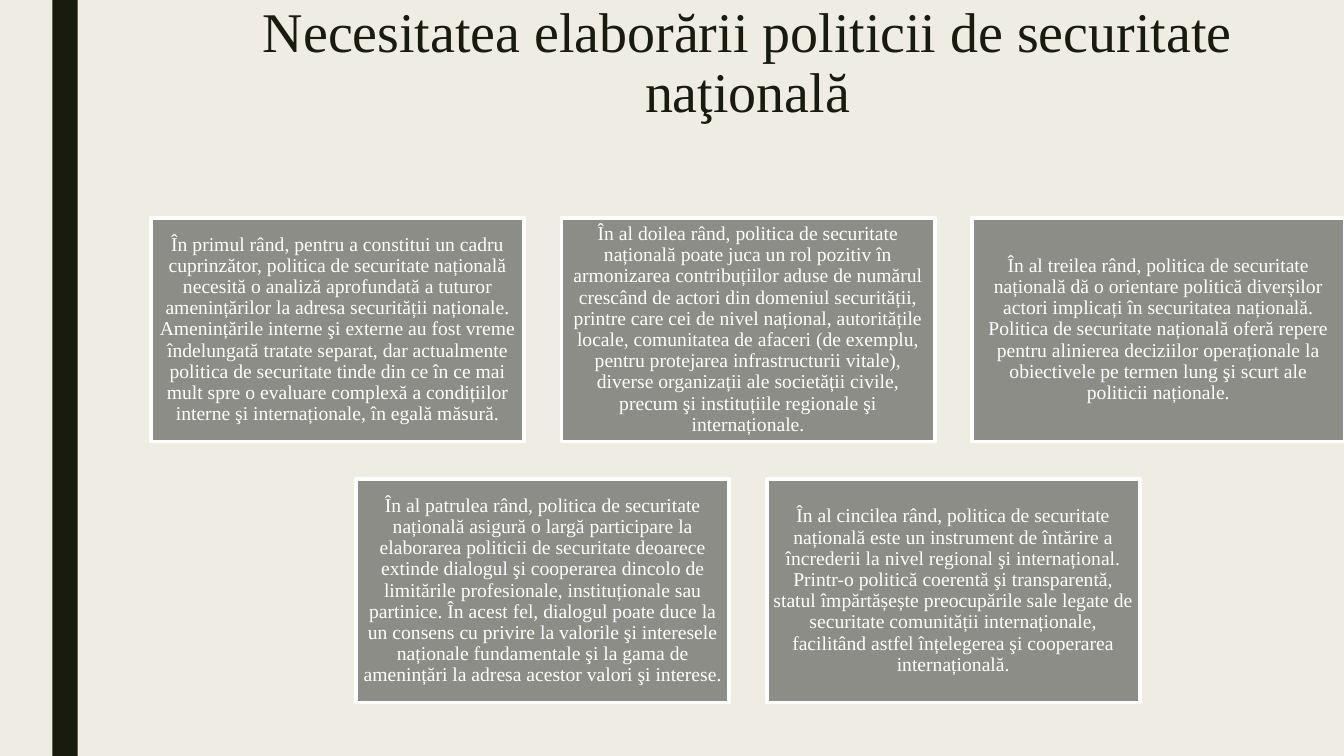
"""Build a slide on why a national security policy is needed."""
import pptx
import pptx.util
import pptx.dml.color
import pptx.enum.shapes
import pptx.enum.text

TITLE = "Necesitatea elaborării politicii de securitate naţională"
ROWS = [
    [
        "În primul rând, pentru a constitui un cadru cuprinzător, politica de securitate națională necesită o analiză aprofundată a tuturor amenințărilor la adresa securității naționale. Amenințările interne şi externe au fost vreme îndelungată tratate separat, dar actualmente politica de securitate tinde din ce în ce mai mult spre o evaluare complexă a condițiilor interne şi internaționale, în egală măsură.",
        "În al doilea rând, politica de securitate națională poate juca un rol pozitiv în armonizarea contribuțiilor aduse de numărul crescând de actori din domeniul securității, printre care cei de nivel național, autoritățile locale, comunitatea de afaceri (de exemplu, pentru protejarea infrastructurii vitale), diverse organizații ale societății civile, precum şi instituțiile regionale şi internaționale.",
        "În al treilea rând, politica de securitate națională dă o orientare politică diverșilor actori implicați în securitatea națională. Politica de securitate națională oferă repere pentru alinierea deciziilor operaționale la obiectivele pe termen lung şi scurt ale politicii naționale.",
    ],
    [
        "În al patrulea rând, politica de securitate națională asigură o largă participare la elaborarea politicii de securitate deoarece extinde dialogul şi cooperarea dincolo de limitările profesionale, instituționale sau partinice. În acest fel, dialogul poate duce la un consens cu privire la valorile şi interesele naționale fundamentale şi la gama de amenințări la adresa acestor valori şi interese.",
        "În al cincilea rând, politica de securitate națională este un instrument de întărire a încrederii la nivel regional şi internațional. Printr-o politică coerentă şi transparentă, statul împărtășește preocupările sale legate de securitate comunității internaționale, facilitând astfel înțelegerea şi cooperarea internațională.",
    ],
]
THEME = {
    "font": "Times New Roman",
    "back": "EFEDE3", "dark": "191B0E", "card": "8C8D86", "light": "FFFFFF",
    "title": 40, "body": 14, "edge": 2.75,
}
LEFT, TOP, WIDE, HIGH, GAP = 1.5, 2.16, 3.7, 2.22, 0.37
Inches, Pt = pptx.util.Inches, pptx.util.Pt
MIDDLE = pptx.enum.text.MSO_ANCHOR.MIDDLE
UPPER = pptx.enum.text.MSO_ANCHOR.TOP


def tint(name):
    return pptx.dml.color.RGBColor.from_string(THEME[name])


def assign(item, values):
    for name, value in values.items():
        setattr(item, name, value)


def paint(fill, name):
    fill.solid()
    fill.fore_color.rgb = tint(name)


def block(slide, area, color):
    kind = pptx.enum.shapes.MSO_SHAPE.RECTANGLE
    shape = slide.shapes.add_shape(kind, *map(Inches, area))
    shape.shadow.inherit = False
    paint(shape.fill, color)
    shape.line.fill.background()
    return shape


def write(shape, text, size, color, pad, anchor, space):
    frame = shape.text_frame
    side, edge = map(Inches, pad)
    assign(frame, {
        "word_wrap": True, "vertical_anchor": anchor,
        "margin_left": side, "margin_right": side,
        "margin_top": edge, "margin_bottom": edge,
    })
    para = frame.paragraphs[0]
    para.text = text
    assign(para, {"alignment": pptx.enum.text.PP_ALIGN.CENTER, "line_spacing": space})
    assign(para.font, {"name": THEME["font"], "size": Pt(THEME[size])})
    para.font.color.rgb = tint(color)


def main():
    deck = pptx.Presentation()
    assign(deck, {"slide_width": Inches(13.33), "slide_height": Inches(7.5)})
    slide = deck.slides.add_slide(deck.slide_layouts[6])
    paint(slide.background.fill, "back")
    block(slide, (0.52, 0, 0.25, 7.5), "dark")
    head = slide.shapes.add_textbox(*map(Inches, (LEFT, 0, 11.83, 1.62)))
    write(head, TITLE, "title", "dark", (0.1, 0.05), UPPER, 0.89)
    most = max(map(len, ROWS))
    for row, texts in enumerate(ROWS):
        start = LEFT + (most - len(texts)) * (WIDE + GAP) / 2
        for col, text in enumerate(texts):
            area = (start + col * (WIDE + GAP), TOP + row * (HIGH + GAP), WIDE, HIGH)
            card = block(slide, area, "card")
            paint(card.line.fill, "light")
            card.line.width = Pt(THEME["edge"])
            write(card, text, "body", "light", (0.06, 0.06), MIDDLE, 0.9)
    deck.save("out.pptx")


if __name__ == "__main__":
    main()
